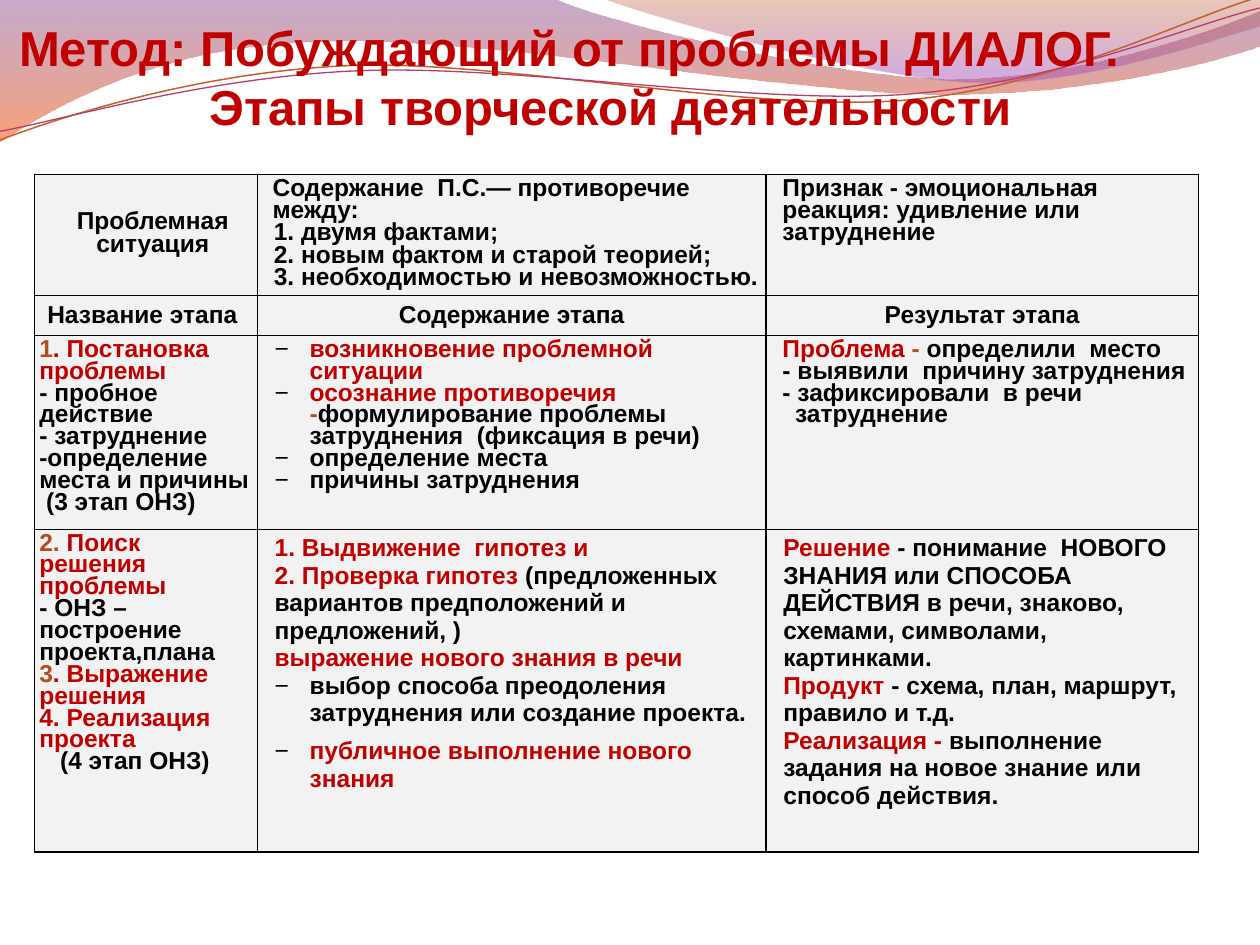
"""Build a slide with a table of the stages of creative activity in a problem dialogue."""
from dataclasses import dataclass

from lxml import etree
from pptx import Presentation
from pptx.dml.color import RGBColor
from pptx.enum.text import MSO_ANCHOR, MSO_AUTO_SIZE, PP_ALIGN
from pptx.oxml.ns import qn
from pptx.util import Pt

CENTER = PP_ALIGN.CENTER
TOP, MIDDLE, BOTTOM = MSO_ANCHOR.TOP, MSO_ANCHOR.MIDDLE, MSO_ANCHOR.BOTTOM
NO_AUTOFIT = MSO_AUTO_SIZE.NONE


@dataclass(frozen=True)
class Theme:
    font: str = "Arial"
    title_size: float = 28
    table_size: float = 14
    red: str = "C00000"
    rust: str = "B24D1D"
    black: str = "000000"
    cell: str = "F2F2F2"
    left_band: tuple = ((0, "834591", 45), (100, "F35307", 55))
    right_band: tuple = ((0, "B74915", 30), (80, "A14BB4", 45))
    upper_line: str = "C45F30"
    lower_line: str = "B83D68"


theme = Theme()
RED, RUST, BLACK = theme.red, theme.rust, theme.black


def add_text(frame, spans, *, size=theme.table_size, align=None, left=0, hang=0,
             right=0, leading=None, after=0, bullet=None):
    """Add one paragraph of (colour, text) spans, where a lone newline breaks the line."""
    para = frame.add_paragraph() if frame.text else frame.paragraphs[0]
    para.alignment = align
    para.space_before, para.space_after = Pt(0), Pt(after)
    if leading:
        para.line_spacing = Pt(leading)
    properties = para._p.get_or_add_pPr()
    for name, value in (("marL", left), ("marR", right), ("indent", hang)):
        properties.set(name, str(Pt(value)))
    if bullet:
        colour = etree.SubElement(properties, qn("a:buClr"))
        etree.SubElement(colour, qn("a:srgbClr"), val=BLACK)
        etree.SubElement(properties, qn("a:buFont"), typeface=theme.font)
        etree.SubElement(properties, qn("a:buChar"), char=bullet)
    for colour, text in spans:
        if text == "\n":
            para.add_line_break()
            etree.SubElement(para._p[-1], qn("a:rPr"), sz=str(size * 100))
            continue
        span = para.add_run()
        span.text = text
        span.font.name, span.font.size, span.font.bold = theme.font, Pt(size), True
        span.font.color.rgb = RGBColor.from_string(colour)


def add_wave(page, start, segments, closed):
    """Draw an outline of straight (x, y) and cubic (x1, y1, x2, y2, x, y) segments."""
    corners = [(Pt(x), Pt(y)) for segment in segments
               for x, y in zip(segment[::2], segment[1::2])]
    builder = page.shapes.build_freeform(Pt(start[0]), Pt(start[1]))
    builder.add_line_segments(corners, close=closed)
    wave = builder.convert_to_shape()
    wave.shadow.inherit = False
    straight = iter(list(wave.element.iter(qn("a:lnTo"))))
    for segment in segments:
        steps = [next(straight) for _ in segment[::2]]
        if len(steps) == 3:
            curve = etree.Element(qn("a:cubicBezTo"))
            steps[0].addprevious(curve)
            for step in steps:
                curve.append(step[0])
                step.getparent().remove(step)
    return wave


deck = Presentation()
deck.slide_width, deck.slide_height = Pt(720), Pt(540)
page = deck.slides.add_slide(deck.slide_layouts[5])

bands = [
    (theme.left_band, (0, -0.7),
     [(317, -0.7), (343, 12, 478, 45, 546, 45), (614, 45, 690, 19, 720, 6), (720.7, 26),
      (708, 32, 626, 55, 537, 54), (448, 54, 275, 20, 185, 24), (93, 25, 33, 60, -0.7, 81.4)]),
    (theme.right_band, (345, -0.7),
     [(366, 8, 491, 44, 554, 47), (616, 50, 692, 23, 720, 15), (720, 0)]),
]
for stops, start, segments in bands:
    band = add_wave(page, start, segments, True)
    band.line.fill.background()
    band.fill.gradient()
    band.fill.gradient_angle = 270
    for stop, (position, colour, opacity) in zip(band.fill.gradient_stops, stops):
        stop.position = position / 100
        stop.color.rgb = RGBColor.from_string(colour)
        for node in stop._gs.iter(qn("a:srgbClr")):
            etree.SubElement(node, qn("a:alpha"), val=str(opacity * 1000))

lines = [
    (theme.upper_line, 0.85, (0, 80),
     [(34, 67, 114, 41, 200, 37.5), (284, 34, 427, 64, 514, 57.5),
      (600, 51, 676, 11, 718.5, -1.4)]),
    (theme.lower_line, 0.75, (0, 75),
     [(34, 69, 118, 44, 204, 40.5), (290, 36.5, 430, 60, 516, 54), (602, 48, 678, 15, 720, 4.5)]),
]
for colour, width, start, segments in lines:
    line = add_wave(page, start, segments, False)
    line.fill.background()
    line.line.color.rgb = RGBColor.from_string(colour)
    line.line.width = Pt(width)

title = page.shapes.title
title.element.getparent().append(title.element)
title.left, title.top, title.width, title.height = Pt(8.5), Pt(3.6), Pt(680.4), Pt(73.5)
frame = title.text_frame
frame.auto_size, frame.word_wrap, frame.vertical_anchor = NO_AUTOFIT, True, BOTTOM
frame.margin_left = frame.margin_right = frame.margin_bottom = 0
add_text(frame, [(RED, "Метод: Побуждающий от проблемы ДИАЛОГ."), (RED, "\n"),
                 (RED, "Этапы творческой деятельности")],
         size=theme.title_size, align=CENTER, leading=33.5, left=47, hang=-47, right=47)

situation = dict(left=6.5, leading=12.7)
header = dict(align=CENTER)
stage = dict(leading=12.5)
loose = dict(left=7)
result = dict(left=13.7, hang=-7.2, leading=12.5)
loose_item = dict(left=27, hang=-20, bullet="−", after=6)
item = dict(left=27, hang=-20, bullet="−", leading=12.5)

rows = [
    [
        [(dict(align=CENTER, left=8, leading=12.7), [(BLACK, "Проблемная ситуация")])],
        [(dict(left=5.8, leading=12.7), [(BLACK, "Содержание  П.С.— противоречие между:")]),
         (situation, [(BLACK, "1. двумя фактами;")]),
         (situation, [(BLACK, "2. новым фактом и старой теорией;")]),
         (situation, [(BLACK, "3. необходимостью и невозможностью.")])],
        [(situation, [(BLACK, "Признак - эмоциональная реакция: удивление или затруднение")])],
    ],
    [[(header, [(BLACK, text)])]
     for text in ("Название этапа ", "Содержание этапа", "Результат этапа")],
    [
        [(stage, [(RUST, "1"), (RED, ". Постановка проблемы")]),
         (stage, [(BLACK, "- пробное действие")]),
         (stage, [(BLACK, "- затруднение -определение места и причины")]),
         (stage, [(BLACK, " (3 этап ОНЗ)")])],
        [(item, [(RED, "возникновение проблемной ситуации")]),
         (item, [(RED, "осознание противоречия  "), (RUST, "-"),
                 (BLACK, "формулирование проблемы  затруднения  (фиксация в речи)")]),
         (item, [(BLACK, "определение места")]),
         (item, [(BLACK, "причины затруднения")])],
        [(result, [(RED, "Проблема"), (RUST, " - "), (BLACK, "определили  место")]),
         (result, [(BLACK, "- выявили  причину затруднения")]),
         (result, [(BLACK, "- зафиксировали  в речи затруднение")])],
    ],
    [
        [(stage, [(RUST, "2. "), (RED, "Поиск решения проблемы")]),
         (stage, [(BLACK, "- ОНЗ – построение проекта,плана")]),
         (stage, [(RUST, "3"), (RED, ". Выражение решения")]),
         (stage, [(RED, "4. Реализация проекта")]),
         (dict(left=8, leading=12.5), [(BLACK, " (4 этап ОНЗ)")])],
        [(loose, [(RED, "1. Выдвижение  гипотез и")]),
         (loose, [(RED, "2. Проверка гипотез "),
                  (BLACK, "(предложенных вариантов предположений и предложений, )")]),
         (loose, [(RED, "выражение нового знания в речи")]),
         (loose_item, [(BLACK, "выбор способа преодоления  затруднения или создание проекта.")]),
         (loose_item, [(RED, "публичное выполнение нового знания")])],
        [(loose, [(RED, "Решение "),
                  (BLACK, "- понимание  НОВОГО ЗНАНИЯ или СПОСОБА ДЕЙСТВИЯ в речи, "
                          "знаково, схемами, символами, картинками.")]),
         (loose, [(RED, "Продукт "), (BLACK, "- схема, план, маршрут, правило и т.д.")]),
         (loose, [(RED, "Реализация - "),
                  (BLACK, "выполнение задания на новое знание или способ действия.")])],
    ],
]
widths, heights = [127.5, 290.7, 247], [67.7, 22.8, 110.7, 184.3]
table = page.shapes.add_table(len(rows), len(widths), Pt(19.6), Pt(99.7),
                              Pt(sum(widths)), Pt(sum(heights))).table
table.first_row = table.horz_banding = False
for column, width in zip(table.columns, widths):
    column.width = Pt(width)
for row_index, (row, height) in enumerate(zip(rows, heights)):
    table.rows[row_index].height = Pt(height)
    for column_index, paragraphs in enumerate(row):
        cell = table.cell(row_index, column_index)
        cell.margin_left = cell.margin_right = cell.margin_top = cell.margin_bottom = Pt(2.9)
        cell.vertical_anchor = MIDDLE if row_index == column_index == 0 else TOP
        for side in ("a:lnL", "a:lnR", "a:lnT", "a:lnB"):
            border = etree.SubElement(cell._tc.get_or_add_tcPr(), qn(side), w=str(Pt(1)))
            paint = etree.SubElement(border, qn("a:solidFill"))
            etree.SubElement(paint, qn("a:srgbClr"), val=BLACK)
        cell.fill.solid()
        cell.fill.fore_color.rgb = RGBColor.from_string(theme.cell)
        for style, spans in paragraphs:
            add_text(cell.text_frame, spans, **style)

deck.save("out.pptx")
